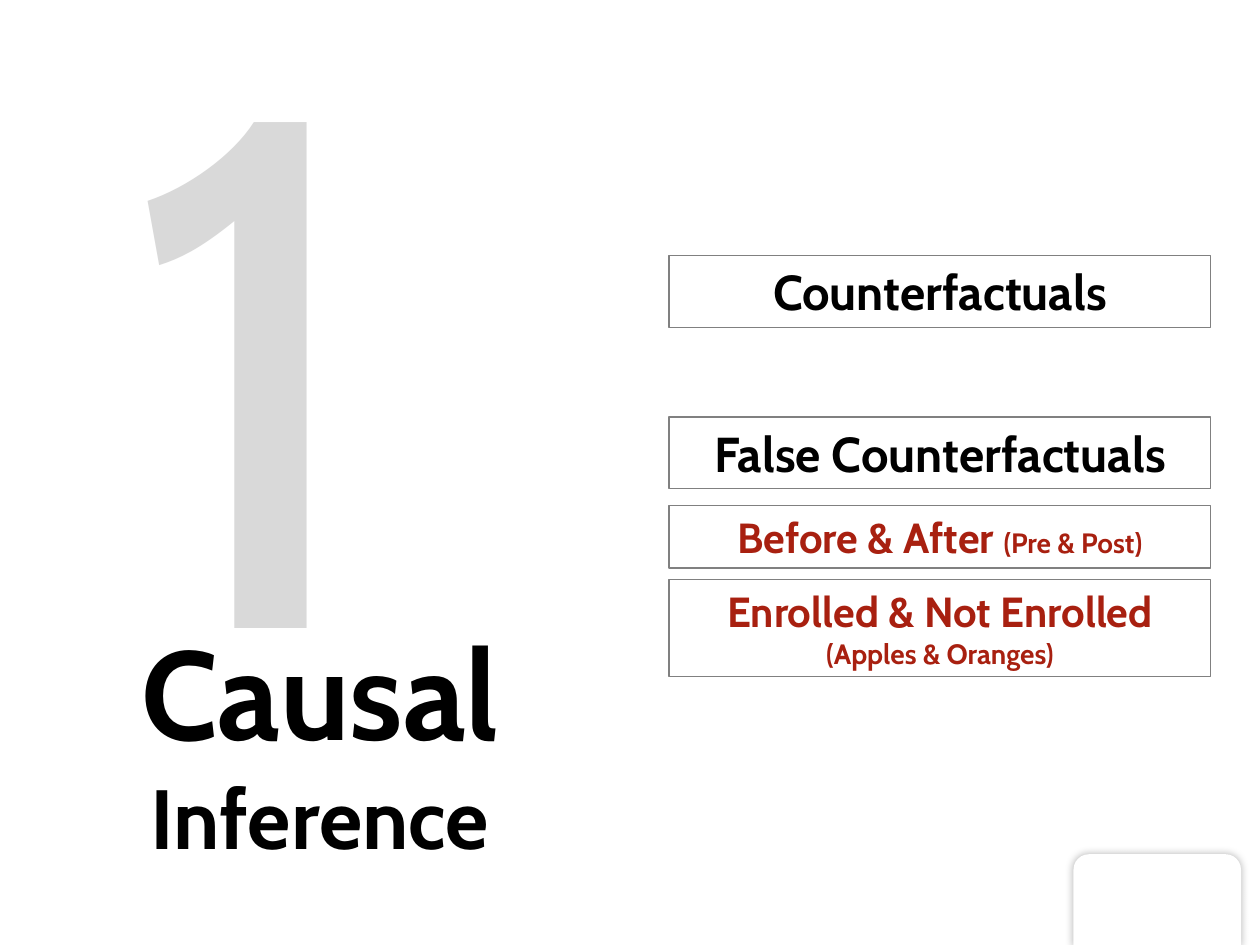
from dataclasses import dataclass
import pptx
import pptx.dml.color
import pptx.enum.shapes
import pptx.enum.text
import pptx.oxml
import pptx.util
from pptx.util import Inches

COLORS = {
    "black": "000000",
    "white": "FFFFFF",
    "numeral": "D9D9D9",
    "border": "808080",
    "red": "A82010",
}
FONT = "Cabin"
ALIGN = pptx.enum.text.PP_ALIGN
SHAPES = pptx.enum.shapes.MSO_SHAPE


@dataclass
class Run:
    text: str
    size: int


@dataclass
class Topic:
    top: float
    height: float
    color: str
    runs: list[Run]


TOPICS = [
    Topic(2.03, 0.57, "black", [Run("Counterfactuals", 28)]),
    Topic(3.31, 0.57, "black", [Run("False Counterfactuals", 28)]),
    Topic(4.01, 0.5, "red", [Run("Before & After ", 24), Run("(Pre & Post)", 16)]),
    Topic(4.6, 0.77, "red", [Run("Enrolled & Not Enrolled ", 24), Run("(Apples & Oranges)", 16)]),
]


def rgb(name: str) -> pptx.dml.color.RGBColor:
    return pptx.dml.color.RGBColor.from_string(COLORS[name])


def write(sp, runs: list[Run], color: str, bold: bool = True,
          align=ALIGN.CENTER, wrap: bool = True) -> None:
    tf = sp.text_frame
    tf.word_wrap = wrap
    tf.auto_size = pptx.enum.text.MSO_AUTO_SIZE.SHAPE_TO_FIT_TEXT
    tf.vertical_anchor = pptx.enum.text.MSO_ANCHOR.TOP
    p = tf.paragraphs[0]
    p.alignment = align
    p.font.name = FONT
    p.font.bold = bold
    p.font.color.rgb = rgb(color)
    for run in runs:
        r = p.add_run()
        r.text = run.text
        r.font.size = pptx.util.Pt(run.size)


def add_tab(s) -> None:
    sp = s.shapes.add_shape(SHAPES.ROUND_2_SAME_RECTANGLE,
                            Inches(8.52), Inches(6.78), Inches(1.33), Inches(0.73))
    sp.fill.solid()
    sp.fill.fore_color.rgb = rgb("white")
    sp.line.fill.background()
    blur = pptx.util.Pt(5)
    sp._element.spPr.append(pptx.oxml.parse_xml(
        '<a:effectLst xmlns:a="http://schemas.openxmlformats.org/drawingml/2006/main">'
        f'<a:outerShdw blurRad="{blur}" dist="0" dir="0" algn="ctr" rotWithShape="0">'
        f'<a:srgbClr val="{COLORS["black"]}"><a:alpha val="30000"/></a:srgbClr>'
        '</a:outerShdw></a:effectLst>'))


def add_topic(s, topic: Topic) -> None:
    sp = s.shapes.add_shape(SHAPES.RECTANGLE, Inches(5.31), Inches(topic.top),
                            Inches(4.3), Inches(topic.height))
    sp.shadow.inherit = False
    sp.fill.background()
    sp.line.color.rgb = rgb("border")
    sp.line.width = pptx.util.Pt(0.75)
    write(sp, topic.runs, topic.color)


def main() -> None:
    prs = pptx.Presentation()
    prs.slide_width, prs.slide_height = Inches(10), Inches(7.5)
    s = prs.slides.add_slide(prs.slide_layouts[6])
    add_tab(s)
    numeral = s.shapes.add_textbox(Inches(0.88), Inches(-0.8), Inches(3.32), Inches(7.05))
    write(numeral, [Run("1", 413)], "numeral", bold=False, align=ALIGN.LEFT, wrap=False)
    title = s.shapes.add_textbox(Inches(0.39), Inches(4.83), Inches(4.3), Inches(2.12))
    write(title, [Run("Causal", 72), Run(" Inference", 48)], "black")
    for topic in TOPICS:
        add_topic(s, topic)
    prs.save("out.pptx")


if __name__ == "__main__":
    main()
